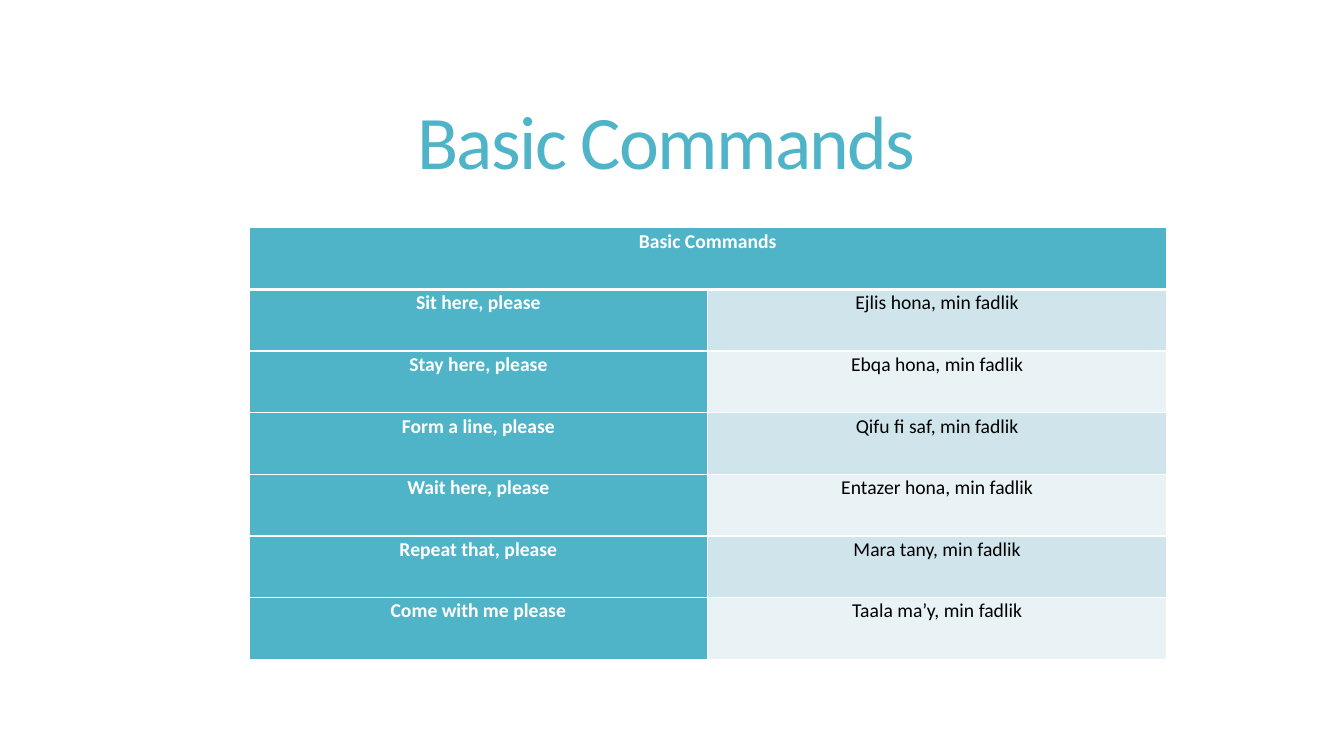
from lxml.etree import SubElement
from pptx import Presentation
from pptx.dml.color import RGBColor
from pptx.enum.text import MSO_ANCHOR, PP_ALIGN
from pptx.oxml.ns import qn
from pptx.util import Inches, Pt

TEAL = RGBColor(0x50, 0xB4, 0xC8)
PALE = RGBColor(0xD0, 0xE5, 0xEB)
LIGHT = RGBColor(0xE9, 0xF2, 0xF5)
WHITE = RGBColor(0xFF, 0xFF, 0xFF)
BLACK = RGBColor(0, 0, 0)
FONT = "Calibri"
TITLE = "Basic Commands"
PHRASES = [
    ("Sit here, please", "Ejlis hona, min fadlik"),
    ("Stay here, please", "Ebqa hona, min fadlik"),
    ("Form a line, please", "Qifu fi saf, min fadlik"),
    ("Wait here, please", "Entazer hona, min fadlik"),
    ("Repeat that, please", "Mara tany, min fadlik"),
    ("Come with me please", "Taala ma’y, min fadlik"),
]


def write(frame, text, size, color, bold, line):
    """Put one centred paragraph into a text frame."""
    para = frame.paragraphs[0]
    para.text = text
    para.alignment = PP_ALIGN.CENTER
    para.line_spacing = line
    font = para.font
    font.name, font.size, font.bold = FONT, Pt(size), bold
    font.color.rgb = color
    return para


def add_title(slide):
    """Add the slide heading with tight letter spacing."""
    box = slide.shapes.add_textbox(
        Inches(0.72), Inches(0.55), Inches(11.78), Inches(1.81))
    frame = box.text_frame
    frame.word_wrap = True
    frame.vertical_anchor = MSO_ANCHOR.MIDDLE
    para = write(frame, TITLE, 54, TEAL, False, 0.85)
    para.runs[0].font._element.set("spc", "-120")


def add_edges(cell, top, bottom):
    """Draw white borders around a cell, with widths in points."""
    props = cell._tc.get_or_add_tcPr()
    for side, width in (("L", 1), ("R", 1), ("T", top), ("B", bottom)):
        line = SubElement(props, qn(f"a:ln{side}"), w=str(Pt(width)))
        fill = SubElement(line, qn("a:solidFill"))
        SubElement(fill, qn("a:srgbClr"), val=str(WHITE))


def fill_cell(cell, text, row, back, color, bold):
    """Style one table cell and write its text."""
    cell.margin_left = cell.margin_right = Inches(0.07)
    cell.margin_top = cell.margin_bottom = 0
    add_edges(cell, 3 if row == 1 else 1, 3 if row == 0 else 1)
    cell.fill.solid()
    cell.fill.fore_color.rgb = back
    write(cell.text_frame, text, 14, color, bold, 1.07)


def add_phrases(slide):
    """Add the table of commands under a merged header."""
    count = len(PHRASES) + 1
    table = slide.shapes.add_table(
        count, 2, Inches(2.47), Inches(2.26), Inches(9.1),
        Inches(4.28)).table
    table.cell(0, 0).merge(table.cell(0, 1))
    fill_cell(table.cell(0, 0), TITLE, 0, TEAL, WHITE, True)
    for row, (phrase, sound) in enumerate(PHRASES, 1):
        band = PALE if row % 2 else LIGHT
        fill_cell(table.cell(row, 0), phrase, row, TEAL, WHITE, True)
        fill_cell(table.cell(row, 1), sound, row, band, BLACK, False)


def main():
    """Build the slide and save it."""
    deck = Presentation()
    deck.slide_width, deck.slide_height = Inches(13.33), Inches(7.5)
    slide = deck.slides.add_slide(deck.slide_layouts[6])
    add_title(slide)
    add_phrases(slide)
    deck.save("out.pptx")


if __name__ == "__main__":
    main()
